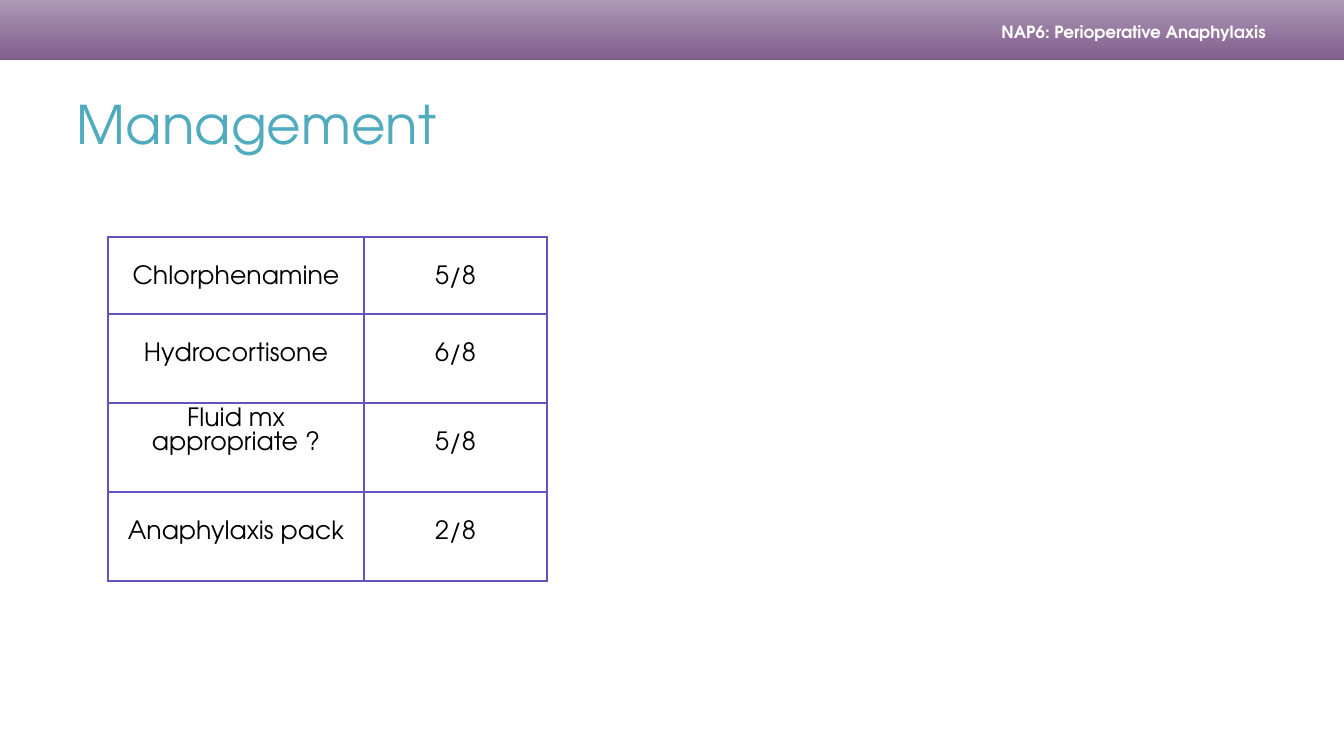
from lxml import etree
from pptx import Presentation
from pptx.dml.color import RGBColor
from pptx.enum.shapes import MSO_SHAPE
from pptx.enum.text import MSO_ANCHOR, PP_ALIGN
from pptx.oxml.ns import qn
from pptx.util import Pt

PX = 914400 / 100.8
FONT = "TeX Gyre Adventor"
RECTANGLE = MSO_SHAPE.RECTANGLE
MIDDLE, TOP = MSO_ANCHOR.MIDDLE, MSO_ANCHOR.TOP
LEFT, CENTER, RIGHT = PP_ALIGN.LEFT, PP_ALIGN.CENTER, PP_ALIGN.RIGHT
COLORS = {
    "band_bottom": "815D8D",
    "band_top": "AD98B6",
    "white": "FFFFFF",
    "title": "50ABBF",
    "border": "6852BD",
    "text": "000000",
}
TREATMENTS = [
    ("Chlorphenamine", "5/8"),
    ("Hydrocortisone", "6/8"),
    ("Fluid mx appropriate ?", "5/8"),
    ("Anaphylaxis pack", "2/8"),
]
COLUMN_WIDTHS = [256, 183]
ROW_HEIGHTS = [77, 89, 89, 89]
CELL_INSET = 5
LINE_POINTS = 17
LINE_HEIGHT = 24


def px(length):
    return round(length * PX)


def rgb(name):
    return RGBColor.from_string(COLORS[name])


def style_paragraph(para, size, color, align, bold=False):
    para.alignment = align
    para.font.name = FONT
    para.font.size = Pt(size)
    para.font.bold = bold
    para.font.color.rgb = rgb(color)


def add_label(page, box, text, size, color, align, bold=False, inset=10):
    frame = page.shapes.add_textbox(*map(px, box)).text_frame
    frame.word_wrap = True
    frame.vertical_anchor = MIDDLE
    frame.margin_left = frame.margin_right = px(inset)
    frame.margin_top = frame.margin_bottom = 0
    frame.text = text
    style_paragraph(frame.paragraphs[0], size, color, align, bold)


def add_header(page, box):
    left, top, width, height = box
    band = page.shapes.add_shape(RECTANGLE, *map(px, box))
    band.shadow.inherit = False
    band.line.fill.background()
    band.fill.gradient()
    band.fill.gradient_angle = 90
    for stop, name in zip(band.fill.gradient_stops, ("band_bottom", "band_top")):
        stop.color.rgb = rgb(name)
    label_box = (left + width - 502, top + 18, 448, 28)
    add_label(page, label_box, "NAP6: Perioperative Anaphylaxis",
              12, "white", RIGHT, bold=True, inset=24)


def set_borders(cell):
    properties = cell._tc.get_or_add_tcPr()
    for position, side in enumerate(("a:lnL", "a:lnR", "a:lnT", "a:lnB")):
        line = etree.Element(qn(side), w=str(Pt(1)))
        fill = etree.SubElement(line, qn("a:solidFill"))
        etree.SubElement(fill, qn("a:srgbClr"), val=COLORS["border"])
        properties.insert(position, line)


def fill_cell(cell, text, lines_above):
    cell.fill.background()
    cell.vertical_anchor = TOP
    cell.margin_left = cell.margin_right = px(7)
    cell.margin_top = px(CELL_INSET + lines_above * LINE_HEIGHT)
    cell.margin_bottom = 0
    cell.text = text
    para = cell.text_frame.paragraphs[0]
    style_paragraph(para, 18, "text", CENTER)
    para.line_spacing = Pt(LINE_POINTS)
    set_borders(cell)


def add_treatment_table(page, left, top):
    box = (left, top, sum(COLUMN_WIDTHS), sum(ROW_HEIGHTS))
    table = page.shapes.add_table(
        len(TREATMENTS), len(COLUMN_WIDTHS), *map(px, box)).table
    table.first_row = table.horz_banding = False
    for column, width in zip(table.columns, COLUMN_WIDTHS):
        column.width = px(width)
    for row, height, texts in zip(table.rows, ROW_HEIGHTS, TREATMENTS):
        row.height = px(height)
        for cell, text in zip(row.cells, texts):
            fill_cell(cell, text, 0 if text.startswith("Fluid") else 1)


def main():
    deck = Presentation()
    deck.slide_width, deck.slide_height = px(1344), px(756)
    page = deck.slides.add_slide(deck.slide_layouts[6])
    add_header(page, (0, 0, 1344, 60))
    add_label(page, (67, 60, 1210, 126), "Management", 38, "title", LEFT)
    add_treatment_table(page, 108, 237)
    deck.save("out.pptx")


if __name__ == "__main__":
    main()
